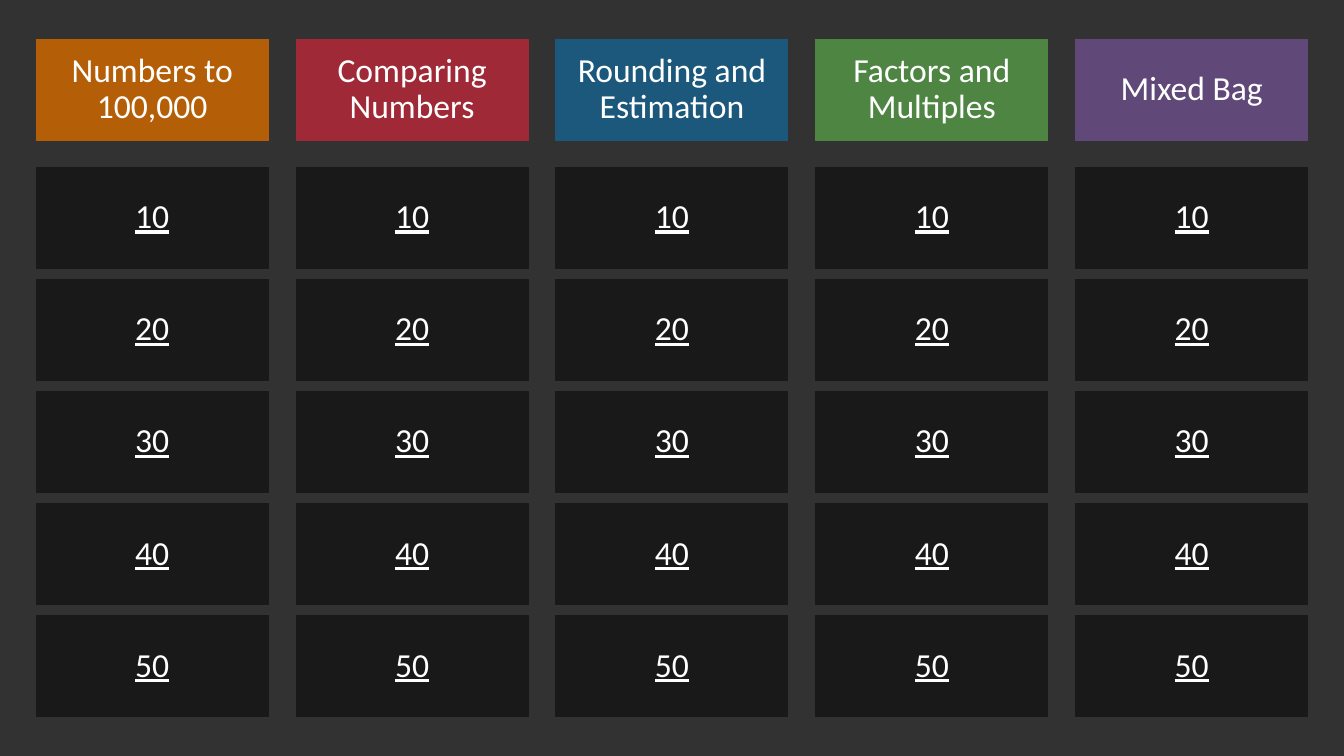
from pptx import Presentation
from pptx.dml.color import RGBColor
from pptx.enum.shapes import MSO_SHAPE
from pptx.enum.text import MSO_ANCHOR, PP_ALIGN
from pptx.util import Inches, Pt

SLIDE_W, SLIDE_H = 13.33, 7.5
TILE_W, TILE_H = 2.3, 1
MARGIN_X, HEADER_Y = 0.36, 0.39
FIRST_ROW_Y, LAST_ROW_Y = 1.66, 6.11

COLORS = {
    "background": "323232",
    "tile": "191919",
    "text": "FFFFFF",
    "orange": "B45F07",
    "red": "9F2936",
    "blue": "1B587C",
    "green": "4E8542",
    "purple": "604878",
}
CATEGORIES = [
    ("Numbers to 100,000", "orange"),
    ("Comparing Numbers", "red"),
    ("Rounding and Estimation", "blue"),
    ("Factors and Multiples", "green"),
    ("Mixed Bag", "purple"),
]
POINTS = [10, 20, 30, 40, 50]
COLUMN_STEP = (SLIDE_W - 2 * MARGIN_X - TILE_W) / (len(CATEGORIES) - 1)
ROW_STEP = (LAST_ROW_Y - FIRST_ROW_Y) / (len(POINTS) - 1)

FRAME_FORMAT = {"word_wrap": True, "vertical_anchor": MSO_ANCHOR.MIDDLE}
PARAGRAPH_FORMAT = {"alignment": PP_ALIGN.CENTER, "line_spacing": 0.9}
FONT_FORMAT = {"name": "Calibri", "size": Pt(24)}


def rgb(name):
    return RGBColor.from_string(COLORS[name])


def apply_format(target, values):
    for name, value in values.items():
        setattr(target, name, value)


def add_tile(s, column, y, text, color, underline=False):
    x = MARGIN_X + column * COLUMN_STEP
    box = [Inches(v) for v in (x, y, TILE_W, TILE_H)]
    sp = s.shapes.add_shape(MSO_SHAPE.RECTANGLE, *box)
    sp.shadow.inherit = False
    sp.fill.solid()
    sp.fill.fore_color.rgb = rgb(color)
    sp.line.color.rgb = rgb(color)
    sp.line.width = Pt(0.75)
    tf = sp.text_frame
    apply_format(tf, FRAME_FORMAT)
    p = tf.paragraphs[0]
    apply_format(p, PARAGRAPH_FORMAT)
    r = p.add_run()
    r.text = text
    apply_format(r.font, FONT_FORMAT | {"underline": underline})
    r.font.color.rgb = rgb("text")


def add_category(s, column, title, color):
    """Add a coloured header with its column of point tiles."""
    add_tile(s, column, HEADER_Y, title, color)
    for row, points in enumerate(POINTS):
        y = FIRST_ROW_Y + row * ROW_STEP
        add_tile(s, column, y, str(points), "tile", underline=True)


def main():
    prs = Presentation()
    prs.slide_width, prs.slide_height = Inches(SLIDE_W), Inches(SLIDE_H)
    s = prs.slides.add_slide(prs.slide_layouts[6])
    s.background.fill.solid()
    s.background.fill.fore_color.rgb = rgb("background")
    for column, (title, color) in enumerate(CATEGORIES):
        add_category(s, column, title, color)
    prs.save("out.pptx")


if __name__ == "__main__":
    main()
